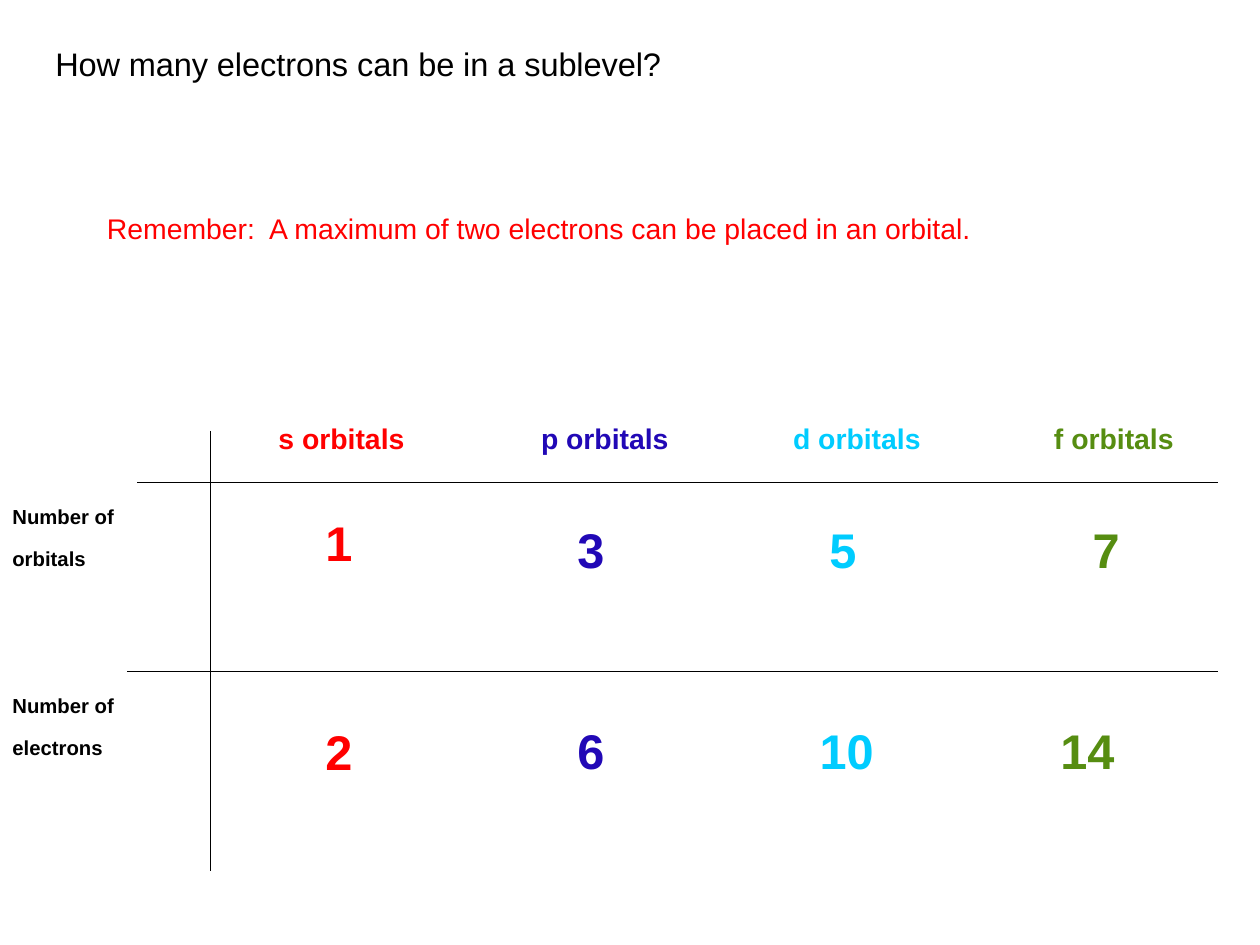
import pptx
import pptx.util
import pptx.dml.color
import pptx.enum.shapes
import pptx.enum.text
import pptx.oxml

Inches, Pt = pptx.util.Inches, pptx.util.Pt
PP_ALIGN = pptx.enum.text.PP_ALIGN

COLORS = {"black": "000000", "red": "FF0000", "blue": "2108B6",
          "cyan": "00CCFF", "green": "568D11"}
RAISE = "30000"

TITLE = "How many electrons can be in a sublevel?"
REMINDER = "Remember:  A maximum of two electrons can be placed in an orbital."
ROW_LABELS = [
    ("Number of\norbitals", 3.92, 1.6, False),
    ("Number of electrons", 5.42, 1.67, True),
]
ORBITALS = [
    ("s orbitals", "red", 2.71, [("1", 2.69, 3.94), ("2", 2.69, 5.6)]),
    ("p orbitals", "blue", 4.8, [("3", 4.69, 4), ("6", 4.69, 5.59)]),
    ("d orbitals", "cyan", 6.8, [("5", 6.69, 4), ("10", 6.72, 5.59)]),
    ("f orbitals", "green", 8.84, [("7", 8.78, 4), ("14", 8.63, 5.59)]),
]
RULES = [(1.09, 3.83, 9.67, 3.83), (1.67, 3.42, 1.67, 6.91), (1.01, 5.33, 9.67, 5.33)]


def add_text(slide, text, box, size, color, bold=True, wrap=False, align=PP_ALIGN.LEFT):
    tf = slide.shapes.add_textbox(*map(Inches, box)).text_frame
    tf.word_wrap = wrap
    tf.auto_size = pptx.enum.text.MSO_AUTO_SIZE.SHAPE_TO_FIT_TEXT
    tf.text = text
    for p in tf.paragraphs:
        p.alignment = align
        for r in p.runs:
            r.font.name = "Arial"
            r.font.size = Pt(size)
            r.font.bold = bold
            r.font.color.rgb = pptx.dml.color.RGBColor.from_string(COLORS[color])
            r.font._element.set("baseline", RAISE)


def add_centered(slide, text, center, top, width, height, size, color):
    box = (center - width / 2, top, width, height)
    add_text(slide, text, box, size, color, align=PP_ALIGN.CENTER)


def add_rule(slide, ends):
    line = slide.shapes.add_connector(
        pptx.enum.shapes.MSO_CONNECTOR.STRAIGHT, *map(Inches, ends))
    line.line.width = Pt(1)
    line.line.color.rgb = pptx.dml.color.RGBColor.from_string(COLORS["black"])
    line._element.spPr.append(pptx.oxml.parse_xml(
        '<a:effectLst xmlns:a="http://schemas.openxmlformats.org/drawingml/2006/main"/>'))


def main():
    prs = pptx.Presentation()
    prs.slide_width, prs.slide_height = Inches(10), Inches(7.5)
    slide = prs.slides.add_slide(prs.slide_layouts[6])

    for ends in RULES:
        add_rule(slide, ends)
    for text, top, width, wrap in ROW_LABELS:
        add_text(slide, text, (0, top, width, 0.77), 20, "black", wrap=wrap)
    for heading, color, center, counts in ORBITALS:
        add_centered(slide, heading, center, 3.25, 1.95, 0.57, 28, color)
        for count, middle, top in counts:
            width = 0.19 + 0.38 * len(count)
            add_centered(slide, count, middle, top, width, 0.91, 48, color)
    add_text(slide, TITLE, (0.34, 0.25, 8.91, 0.64), 32, "black", bold=False, wrap=True)
    add_text(slide, REMINDER, (0.75, 1.58, 8.41, 1.04), 28, "red", bold=False, wrap=True)

    prs.save("out.pptx")


if __name__ == "__main__":
    main()
